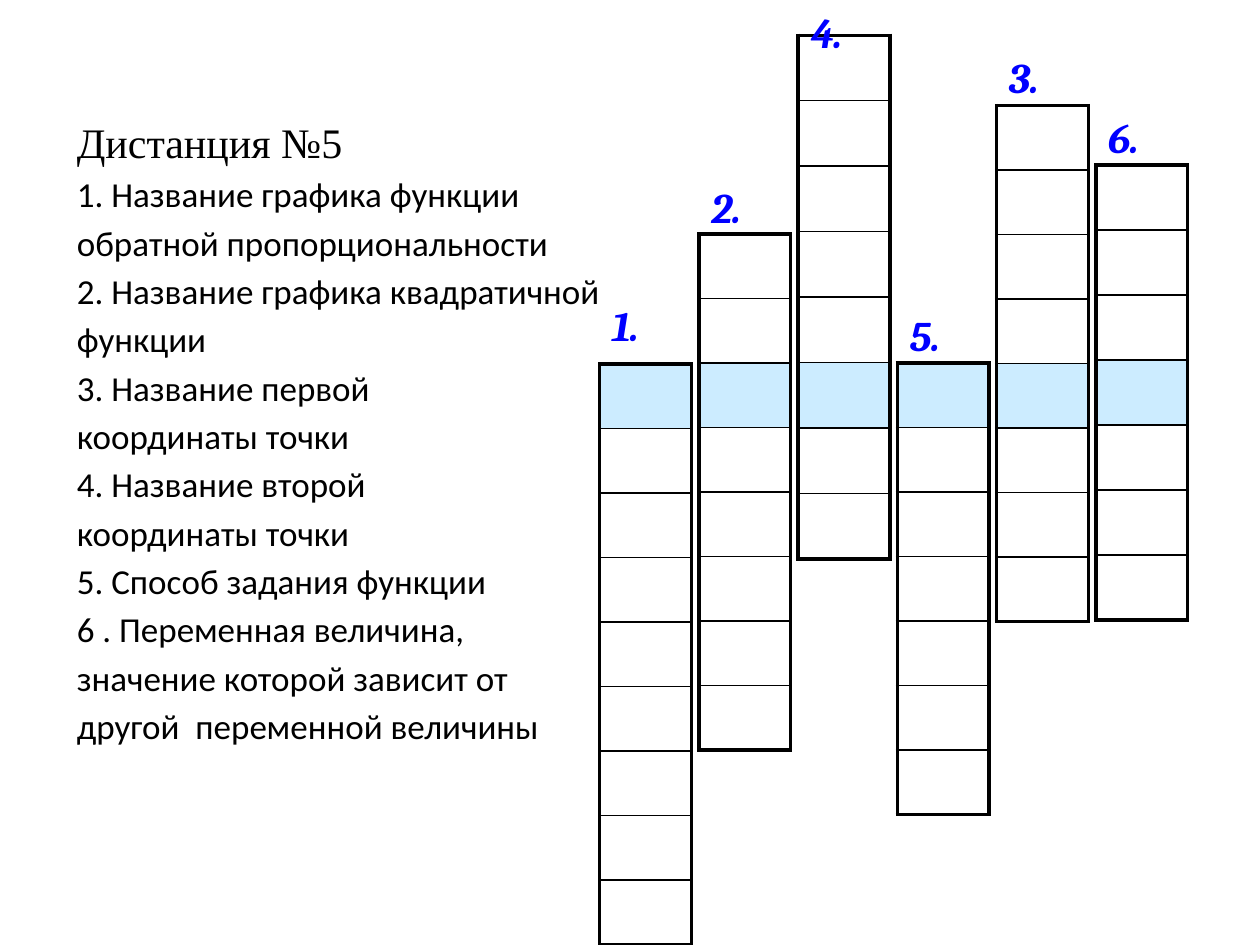
from lxml.etree import SubElement
from pptx import Presentation
from pptx.dml.color import RGBColor as RGB
from pptx.oxml.ns import qn
from pptx.util import Cm, Pt

BLACK = RGB(0, 0, 0)
BLUE = RGB(0, 0, 255)
SKY = RGB(204, 236, 255)

TITLE = "Дистанция №5"
CLUES = [
    "1. Название графика функции",
    "обратной пропорциональности",
    "2. Название графика квадратичной",
    "функции",
    "3. Название первой",
    "координаты точки",
    "4. Название второй",
    "координаты точки",
    "5. Способ задания функции",
    "6 . Переменная величина,",
    "значение которой зависит от",
    "другой  переменной величины",
]
# label, label top, word top, letters, shaded letter, letter height (cm)
WORDS = [
    ("1.", 5.92, 7.34, 9, 0, 1.3),
    ("2.", 3.53, 4.72, 8, 2, 1.3),
    ("4.", 0, 0.71, 8, 5, 1.32),
    ("5.", 6.12, 7.32, 7, 0, 1.3),
    ("3.", 0.91, 2.13, 8, 4, 1.3),
    ("6.", 2.13, 3.33, 7, 3, 1.31),
]
LEFT, STEP, WIDTH = 12.09, 2, 1.85
THICK, THIN = 2.25, 1


def add_text(slide, lines, x, y, w, h, gap=0, **style):
    frame = slide.shapes.add_textbox(Cm(x), Cm(y), Cm(w), Cm(h)).text_frame
    frame.word_wrap = True
    for i, line in enumerate(lines):
        para = frame.paragraphs[0] if i == 0 else frame.add_paragraph()
        if i:
            para.space_before = Pt(gap)
        format_run(para, line, **style)
    return frame


def format_run(para, text, font="Calibri", size=20, color=BLACK, accent=False):
    run = para.add_run()
    run.text = text
    run.font.name = font
    run.font.size = Pt(size)
    run.font.color.rgb = color
    run.font.bold = run.font.italic = accent


def set_borders(cell, **widths):
    props = cell._tc.get_or_add_tcPr()
    for side, width in widths.items():
        line = SubElement(props, qn("a:ln" + side), w=str(Pt(width)))
        fill = SubElement(line, qn("a:solidFill"))
        SubElement(fill, qn("a:srgbClr"), val=str(BLACK))


def add_word(slide, x, y, count, shaded, height):
    """Draw a vertical strip of letter cells with one shaded."""
    table = slide.shapes.add_table(
        count, 1, Cm(x), Cm(y), Cm(WIDTH), Cm(count * height)).table
    table.first_row = table.horz_banding = False
    for i, row in enumerate(table.rows):
        row.height = Cm(height)
        cell = table.cell(i, 0)
        set_borders(cell, L=THICK, R=THICK,
                    T=THICK if i == 0 else THIN,
                    B=THICK if i == count - 1 else THIN)
        if i == shaded:
            cell.fill.solid()
            cell.fill.fore_color.rgb = SKY
        else:
            cell.fill.background()


def main():
    prs = Presentation()
    prs.slide_width, prs.slide_height = Cm(25.4), Cm(19.05)
    slide = prs.slides.add_slide(prs.slide_layouts[6])

    body = add_text(slide, [""] + CLUES, 1.3, 2.22, 22.86, 15.08, gap=3.6)
    head = body.paragraphs[0].runs[0]
    head.text = TITLE
    head.font.name, head.font.size = "Times New Roman", Pt(24)

    for i, (label, top, *word) in enumerate(WORDS):
        x = LEFT + i * STEP
        add_word(slide, x, *word)
        add_text(slide, [label], x, top, 1.35, 1.27, font="Cambria",
                 size=24, color=BLUE, accent=True)

    prs.save("out.pptx")


if __name__ == "__main__":
    main()
